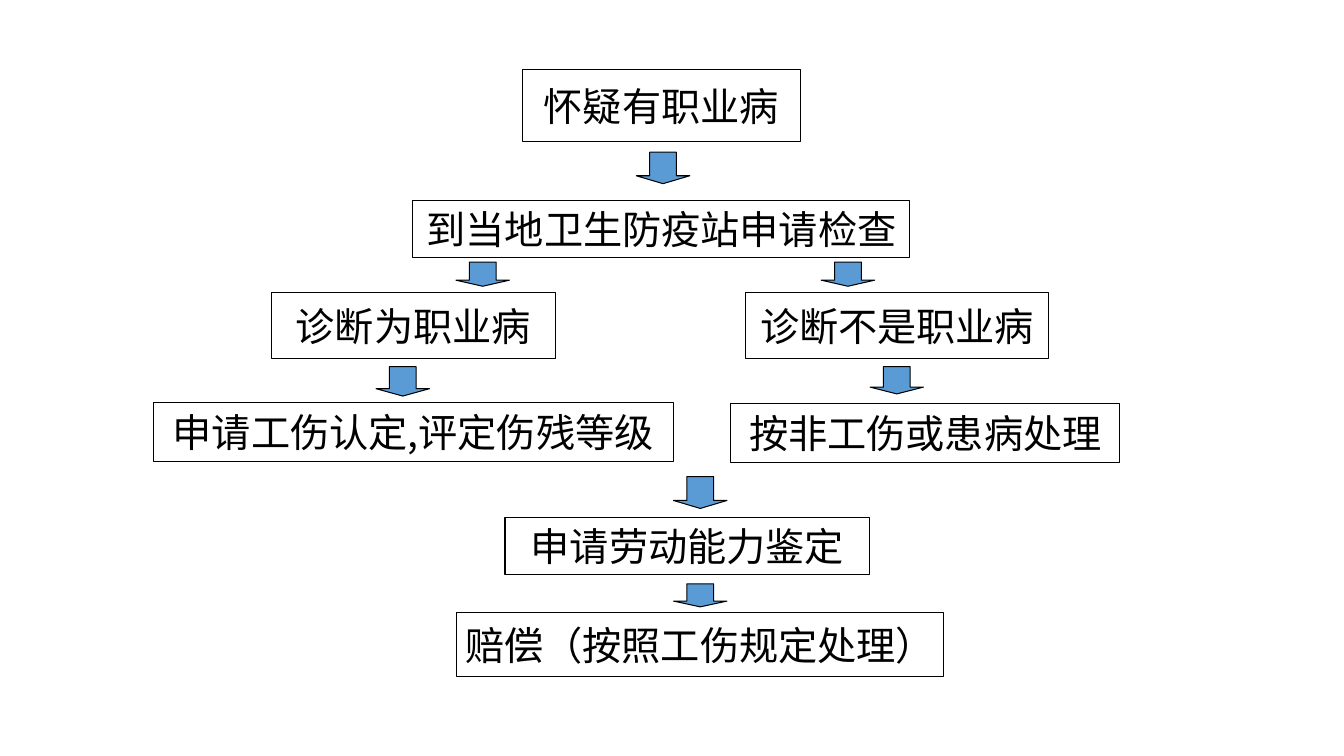
from dataclasses import dataclass

from lxml import etree
from pptx import Presentation
from pptx.dml.color import RGBColor
from pptx.enum import shapes, text
from pptx.oxml import ns
from pptx.util import Pt


@dataclass(frozen=True)
class Theme:
    ink: RGBColor = RGBColor(0, 0, 0)
    paper: RGBColor = RGBColor(255, 255, 255)
    arrow: RGBColor = RGBColor(0x5B, 0x9B, 0xD5)
    font: str = "Noto Sans CJK SC"
    size: int = 28
    outline: float = 0.75


theme = Theme()
deck = Presentation()
deck.slide_width, deck.slide_height = Pt(960), Pt(540)
slide = deck.slides.add_slide(deck.slide_layouts[6])


def add_outlined(kind, left, top, width, height, fill):
    shape = slide.shapes.add_shape(kind, Pt(left), Pt(top), Pt(width), Pt(height))
    shape.shadow.inherit = False
    shape.fill.solid()
    shape.fill.fore_color.rgb = fill
    shape.line.color.rgb = theme.ink
    shape.line.width = Pt(theme.outline)
    return shape


PROCESS = shapes.MSO_SHAPE.FLOWCHART_PROCESS
BOX = shapes.MSO_SHAPE.RECTANGLE
steps = [
    (PROCESS, "怀疑有职业病", 373, 49.6, 198.7, 51.8),
    (PROCESS, "到当地卫生防疫站申请检查", 295, 143.3, 355, 41),
    (BOX, "诊断为职业病", 193.7, 208.8, 203, 47.5),
    (BOX, "申请工伤认定,评定伤残等级", 109.4, 287.3, 371.5, 42.5),
    (BOX, "申请劳动能力鉴定", 360.7, 369.4, 260.6, 41),
    (BOX, "赔偿（按照工伤规定处理）", 326.2, 437.8, 347.8, 45.4),
    (BOX, "诊断不是职业病", 532.8, 208.8, 216, 47.5),
    (BOX, "按非工伤或患病处理", 522, 288, 278, 42.5),
]
for kind, wording, left, top, width, height in steps:
    step = add_outlined(kind, left, top, width, height, theme.paper)
    frame = step.text_frame
    frame.word_wrap = False
    frame.vertical_anchor = text.MSO_ANCHOR.MIDDLE
    label = frame.paragraphs[0]
    label.text = wording
    label.alignment = text.PP_ALIGN.CENTER
    label.font.size = Pt(theme.size)
    label.font.color.rgb = theme.ink
    label.font.name = theme.font
    defaults = label._p.pPr.find(ns.qn("a:defRPr"))
    etree.SubElement(defaults, ns.qn("a:ea"), typeface=theme.font)

ARROW_WIDTH = 38.2
arrows = [
    (473.6, 108.7, 22.5),
    (344.8, 187.2, 17.3),
    (605.7, 187.2, 17.3),
    (287.7, 261.9, 21),
    (640.6, 261.9, 19.5),
    (500.2, 340.4, 22.8),
    (500.2, 417, 16.5),
]
for center, top, height in arrows:
    arrow = add_outlined(shapes.MSO_SHAPE.DOWN_ARROW, center - ARROW_WIDTH / 2, top,
                         ARROW_WIDTH, height, theme.arrow)
    arrow.adjustments[0] = 0.5
    arrow.adjustments[1] = 0.25

deck.save("out.pptx")
